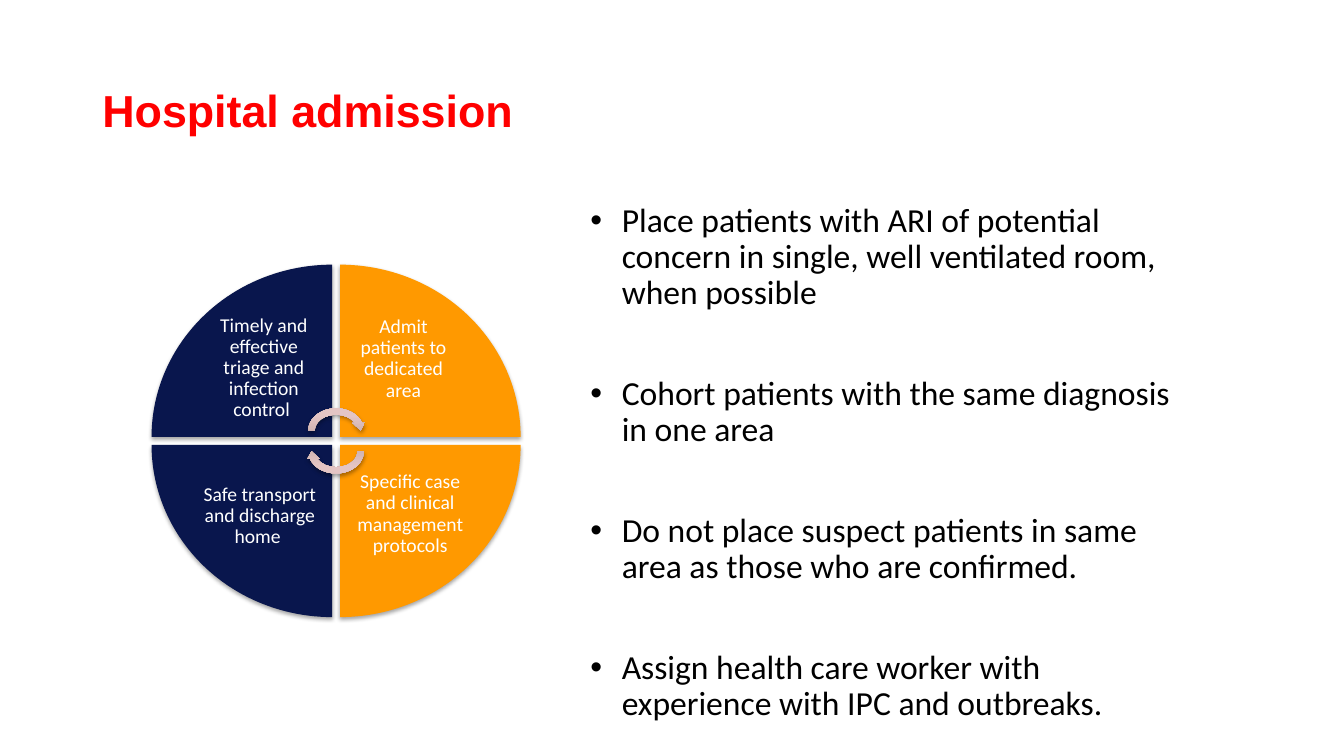
from lxml.etree import SubElement
from pptx import Presentation
from pptx.dml.color import RGBColor
from pptx.enum.shapes import MSO_SHAPE
from pptx.enum.text import MSO_ANCHOR, PP_ALIGN
from pptx.oxml import parse_xml
from pptx.oxml.ns import nsdecls, qn
from pptx.util import Cm, Pt

NAVY, ORANGE, WHITE, BLACK, RED = "09164D", "FF9900", "FFFFFF", "000000", "FF0000"
CENTRE_X, CENTRE_Y, HALF_GAP = 8.47, 11.11, 0.1
WEDGE_WIDTH, WEDGE_HEIGHT = 4.55, 4.34
ARROW_WIDTH, ARROW_HEIGHT, ARROW_OFFSET = 1.56, 1.28, 0.26
SHADOW = f"""<a:effectLst {nsdecls("a")}>
  <a:outerShdw blurRad="38100" dist="22860" dir="5400000" rotWithShape="0">
    <a:srgbClr val="000000"><a:alpha val="35000"/></a:srgbClr>
  </a:outerShdw></a:effectLst>"""
ARROW_FILL = f"""<a:gradFill {nsdecls("a")} rotWithShape="1"><a:gsLst>
  <a:gs pos="0"><a:srgbClr val="AE9695"/></a:gs>
  <a:gs pos="80000"><a:srgbClr val="E4C5C4"/></a:gs>
  <a:gs pos="100000"><a:srgbClr val="E6C5C4"/></a:gs>
  </a:gsLst><a:lin ang="16200000" scaled="0"/></a:gradFill>"""

deck = Presentation()
deck.slide_width, deck.slide_height = Cm(33.87), Cm(19.05)
page = deck.slides.add_slide(deck.slide_layouts[6])


def add_text(frame, paragraphs, color, font, para_format, box_format):
    box = page.shapes.add_textbox(*[Cm(value) for value in frame])
    for name, value in box_format.items():
        setattr(box.text_frame, name, value)
    box.text_frame.word_wrap = True
    for index, text in enumerate(paragraphs):
        para = box.text_frame.paragraphs[0] if index == 0 else box.text_frame.add_paragraph()
        for name, value in para_format.items():
            setattr(para, name, value)
        span = para.add_run()
        span.text = text
        for name, value in font.items():
            setattr(span.font, name, value)
        span.font.color.rgb = RGBColor.from_string(color)
    return box


def add_part(kind, middle_x, middle_y, width, height, rotation, color=None):
    shape = page.shapes.add_shape(kind, Cm(middle_x - width / 2), Cm(middle_y - height / 2),
                                  Cm(width), Cm(height))
    shape.rotation = rotation
    shape.line.fill.background()
    if color:
        shape.fill.solid()
        shape.fill.fore_color.rgb = RGBColor.from_string(color)
    else:
        shape.element.spPr.find(qn("a:prstGeom")).addnext(parse_xml(ARROW_FILL))
    shape.element.spPr.append(parse_xml(SHADOW))


# Recommendations
advice = add_text(
    (14.63, 5, 15.42, 13.26),
    ["Place patients with ARI of potential concern in single, well ventilated room, when possible",
     "Cohort patients with the same diagnosis in one area",
     "Do not place suspect patients in same area as those who are confirmed.",
     "Assign health care worker with experience with IPC and outbreaks."],
    BLACK, {"name": "Calibri", "size": Pt(24)},
    {"line_spacing": 0.9, "space_before": Pt(46)}, {})
advice.text_frame.paragraphs[0].space_before = Pt(10)
for para in advice.text_frame.paragraphs:
    properties = para._p.get_or_add_pPr()
    properties.set("marL", str(Cm(0.79)))
    properties.set("indent", str(-Cm(0.79)))
    SubElement(properties, qn("a:buFont")).set("typeface", "Arial")
    SubElement(properties, qn("a:buChar")).set("char", "•")

# Title
add_text((2.33, 1.01, 29.21, 3.68), ["Hospital admission"], RED,
         {"name": "Arial", "size": Pt(32), "bold": True},
         {"line_spacing": 0.9}, {"vertical_anchor": MSO_ANCHOR.MIDDLE})

# Four quarters of the care cycle, clockwise, each with its label
quarters = [
    (-1, -1, NAVY, (5.05, 7.77, 3.2, 3.02), "Timely and effective triage and infection control "),
    (1, -1, ORANGE, (8.57, 7.8, 3.2, 2.49), "Admit patients to dedicated area"),
    (1, 1, ORANGE, (8.74, 11.71, 3.2, 2.49), "Specific case and clinical management protocols"),
    (-1, 1, NAVY, (4.95, 12.02, 3.2, 1.96), "Safe transport and discharge home "),
]
margins = {f"margin_{side}": Cm(0.15) for side in ("left", "right", "top", "bottom")}
for turn, (side_x, side_y, color, frame, label) in enumerate(quarters):
    size = (WEDGE_HEIGHT, WEDGE_WIDTH) if turn % 2 else (WEDGE_WIDTH, WEDGE_HEIGHT)
    add_part(MSO_SHAPE.PIE_WEDGE, CENTRE_X + side_x * (HALF_GAP + WEDGE_WIDTH / 2),
             CENTRE_Y + side_y * (HALF_GAP + WEDGE_HEIGHT / 2), *size, turn * 90, color)
    add_text(frame, [label], WHITE, {"name": "Calibri", "size": Pt(14)},
             {"alignment": PP_ALIGN.CENTER, "line_spacing": 0.9, "space_before": Pt(4)},
             {"vertical_anchor": MSO_ANCHOR.MIDDLE, **margins})

# Two circular arrows, the lower one turned by half a turn
for side_y, rotation in ((-1, 0), (1, 180)):
    add_part(MSO_SHAPE.CIRCULAR_ARROW, CENTRE_X, CENTRE_Y + side_y * ARROW_OFFSET,
             ARROW_WIDTH, ARROW_HEIGHT, rotation)

deck.save("out.pptx")
